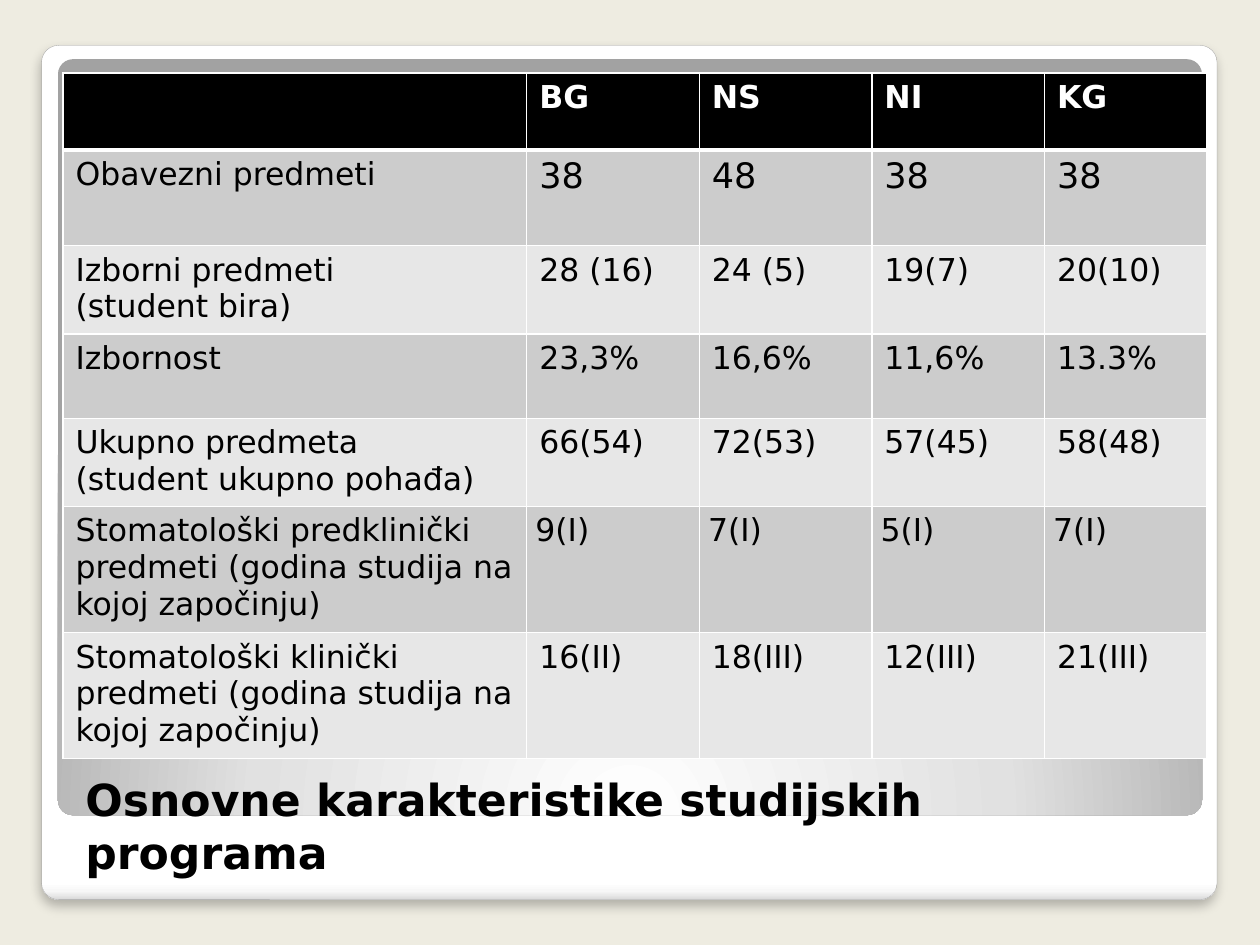
from dataclasses import dataclass

import lxml.etree
import pptx
import pptx.dml.color
import pptx.enum.shapes
import pptx.enum.text
import pptx.oxml
import pptx.oxml.ns
import pptx.util

FONT = "DejaVu Sans"
COLORS = {
    "background": "EEECE1", "outline": "A4A4A4", "white": "FFFFFF",
    "black": "000000", "dark_band": "CCCCCC", "light_band": "E7E7E7",
}
# The slide is a grid of 1000 columns by 750 rows
UNIT = pptx.util.Inches(0.01)
SLIDE_COLUMNS, SLIDE_ROWS = 1000, 750
COLUMN_WIDTHS = [368, 137, 137, 137, 129]
ROW_HEIGHTS = [61, 76, 61, 67, 67, 67, 67]


@dataclass
class Area:
    left: int
    top: int
    width: int
    height: int

    def lengths(self) -> list:
        return [n * UNIT for n in (self.left, self.top, self.width, self.height)]


@dataclass
class Panel:
    area: Area
    stops: list
    direction: str
    outlined: bool = False


@dataclass
class Row:
    label: str
    values: list
    value_size: int = 18
    tight: bool = False


PANELS = [
    Panel(Area(33, 36, 933, 678),
          [(0, "FFFFFF"), (98, "FFFFFF"), (99, "F7F7F7"), (100, "DADADA")],
          '<a:lin ang="5400000" scaled="0"/>', outlined=True),
    Panel(Area(46, 47, 908, 600),
          [(0, "FFFFFF"), (55, "E1E1E1"), (100, "A2A2A2")],
          '<a:path path="circle"><a:fillToRect l="50000" t="175000" '
          'r="50000" b="-75000"/></a:path>'),
]
ROWS = [
    Row("", ["BG", "NS", "NI", "KG"]),
    Row("Obavezni predmeti", ["38", "48", "38", "38"], value_size=20),
    Row("Izborni predmeti\n(student bira)", ["28 (16)", "24 (5)", "19(7)", "20(10)"]),
    Row("Izbornost", ["23,3%", "16,6%", "11,6%", "13.3%"]),
    Row("Ukupno predmeta\n(student ukupno pohađa)",
        ["66(54)", "72(53)", "57(45)", "58(48)"]),
    Row("Stomatološki predklinički predmeti (godina studija na kojoj započinju)",
        ["9(I)", "7(I)", "5(I)", "7(I)"], tight=True),
    Row("Stomatološki klinički predmeti (godina studija na kojoj započinju)",
        ["16(II)", "18(III)", "12(III)", "21(III)"]),
]


def color(name: str) -> pptx.dml.color.RGBColor:
    return pptx.dml.color.RGBColor.from_string(COLORS[name])


def element(tag: str, content: str, attributes: str = "") -> lxml.etree._Element:
    namespace = pptx.oxml.ns.nsdecls("a")
    return pptx.oxml.parse_xml(f"<a:{tag} {namespace} {attributes}>{content}</a:{tag}>")


def style_text(frame, size: float, color_name: str, bold: bool) -> None:
    for paragraph in frame.paragraphs:
        paragraph.font.size = pptx.util.Pt(size)
        for span in paragraph.runs:
            span.font.name = FONT
            span.font.size = pptx.util.Pt(size)
            span.font.bold = bold
            span.font.color.rgb = color(color_name)


def draw_panel(page, panel: Panel) -> None:
    box = page.shapes.add_shape(
        pptx.enum.shapes.MSO_SHAPE.ROUNDED_RECTANGLE, *panel.area.lengths())
    box.adjustments[0] = 0.02
    box.shadow.inherit = False
    stops = "".join(f'<a:gs pos="{share * 1000}"><a:srgbClr val="{value}"/></a:gs>'
                    for share, value in panel.stops)
    properties = box.element.spPr
    properties.find(pptx.oxml.ns.qn("a:prstGeom")).addnext(
        element("gradFill", f"<a:gsLst>{stops}</a:gsLst>{panel.direction}",
                'rotWithShape="1"'))
    if not panel.outlined:
        box.line.fill.background()
        return
    box.line.color.rgb = color("outline")
    box.line.width = pptx.util.Pt(0.16)
    properties.find(pptx.oxml.ns.qn("a:effectLst")).append(element(
        "outerShdw",
        f'<a:srgbClr val="{COLORS["black"]}"><a:alpha val="25000"/></a:srgbClr>',
        f'blurRad="{pptx.util.Pt(6)}" dist="{pptx.util.Pt(4)}" dir="5400000" '
        'algn="t" rotWithShape="0"'))


def draw_title(page, text: str, area: Area) -> None:
    frame = page.shapes.add_textbox(*area.lengths()).text_frame
    frame.word_wrap = True
    frame.vertical_anchor = pptx.enum.text.MSO_ANCHOR.BOTTOM
    frame.margin_bottom = 36 * UNIT
    frame.text = text
    style_text(frame, 25.2, "black", True)


def style_cell(cell, row_index: int) -> None:
    # Heavier rule between the header and the body
    widths = {"lnL": 1, "lnR": 1, "lnT": 3 if row_index == 1 else 1,
              "lnB": 3 if row_index == 0 else 1}
    properties = cell._tc.get_or_add_tcPr()
    for side, width in widths.items():
        properties.append(element(
            side,
            f'<a:solidFill><a:srgbClr val="{COLORS["white"]}"/></a:solidFill>',
            f'w="{pptx.util.Pt(width)}"'))
    band = "dark_band" if row_index % 2 else "light_band"
    cell.fill.solid()
    cell.fill.fore_color.rgb = color("black" if row_index == 0 else band)


def draw_table(page, rows: list, area: Area) -> None:
    table = page.shapes.add_table(
        len(rows), len(COLUMN_WIDTHS), *area.lengths()).table
    for column, width in zip(table.columns, COLUMN_WIDTHS):
        column.width = width * UNIT
    for line, height in zip(table.rows, ROW_HEIGHTS):
        line.height = height * UNIT
    for row_index, row in enumerate(rows):
        header = row_index == 0
        for column_index, text in enumerate([row.label, *row.values]):
            cell = table.cell(row_index, column_index)
            cell.text_frame.text = text
            style_cell(cell, row_index)
            style_text(cell.text_frame, row.value_size if column_index else 18,
                       "white" if header else "black", header)
            if row.tight and column_index:
                cell.margin_left = cell.margin_right = 7 * UNIT
                cell.margin_top = cell.margin_bottom = 0
                cell.text_frame.paragraphs[0].line_spacing = 1.15


def main() -> None:
    deck = pptx.Presentation()
    deck.slide_width = SLIDE_COLUMNS * UNIT
    deck.slide_height = SLIDE_ROWS * UNIT
    page = deck.slides.add_slide(deck.slide_layouts[6])
    page.background.fill.solid()
    page.background.fill.fore_color.rgb = color("background")

    # Framed backdrop
    for panel in PANELS:
        draw_panel(page, panel)
    # Title below the comparison table
    draw_title(page, "Osnovne karakteristike studijskih programa",
               Area(58, 675, 887, 58))
    draw_table(page, ROWS, Area(50, 58, sum(COLUMN_WIDTHS), sum(ROW_HEIGHTS)))
    deck.save("out.pptx")


if __name__ == "__main__":
    main()
